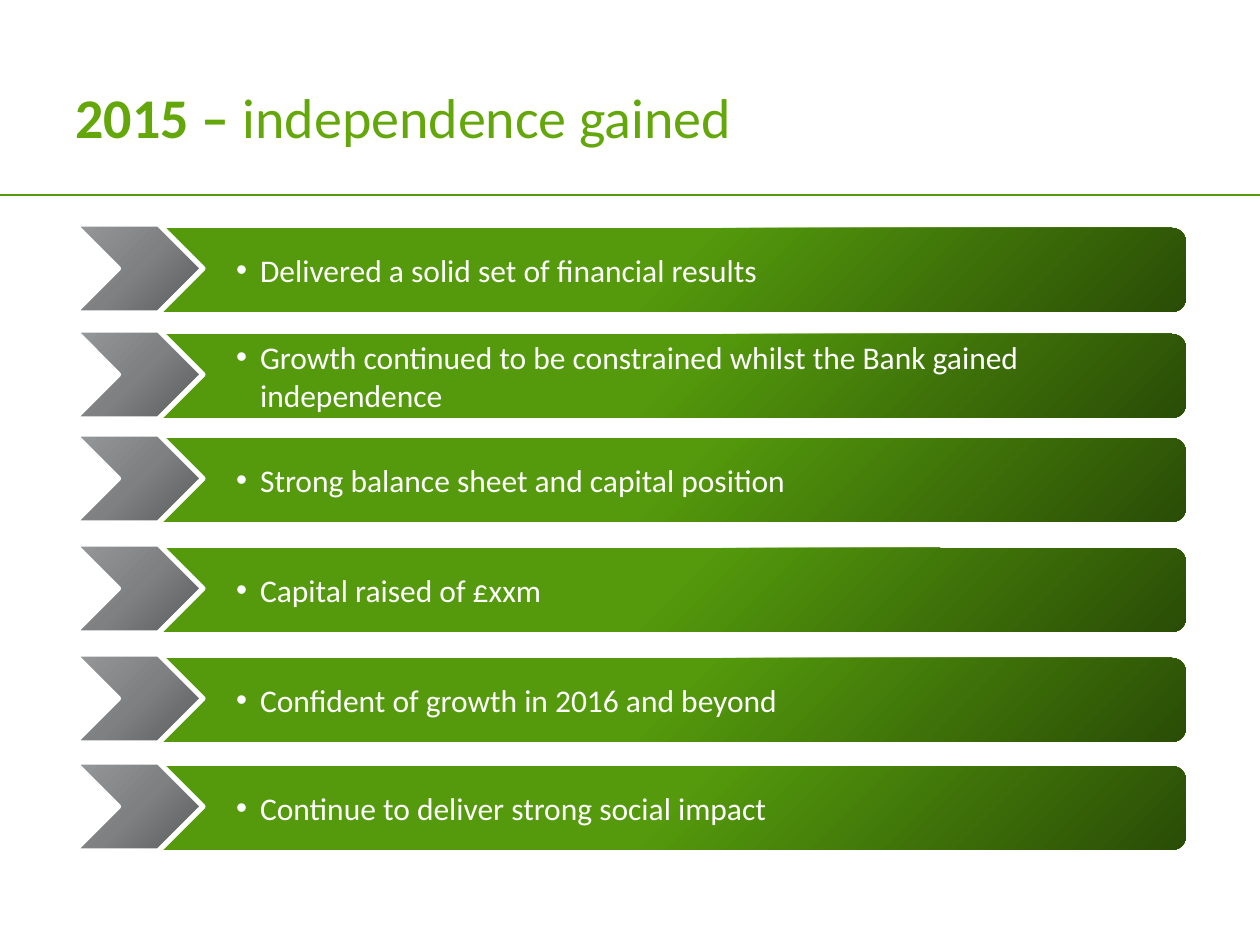
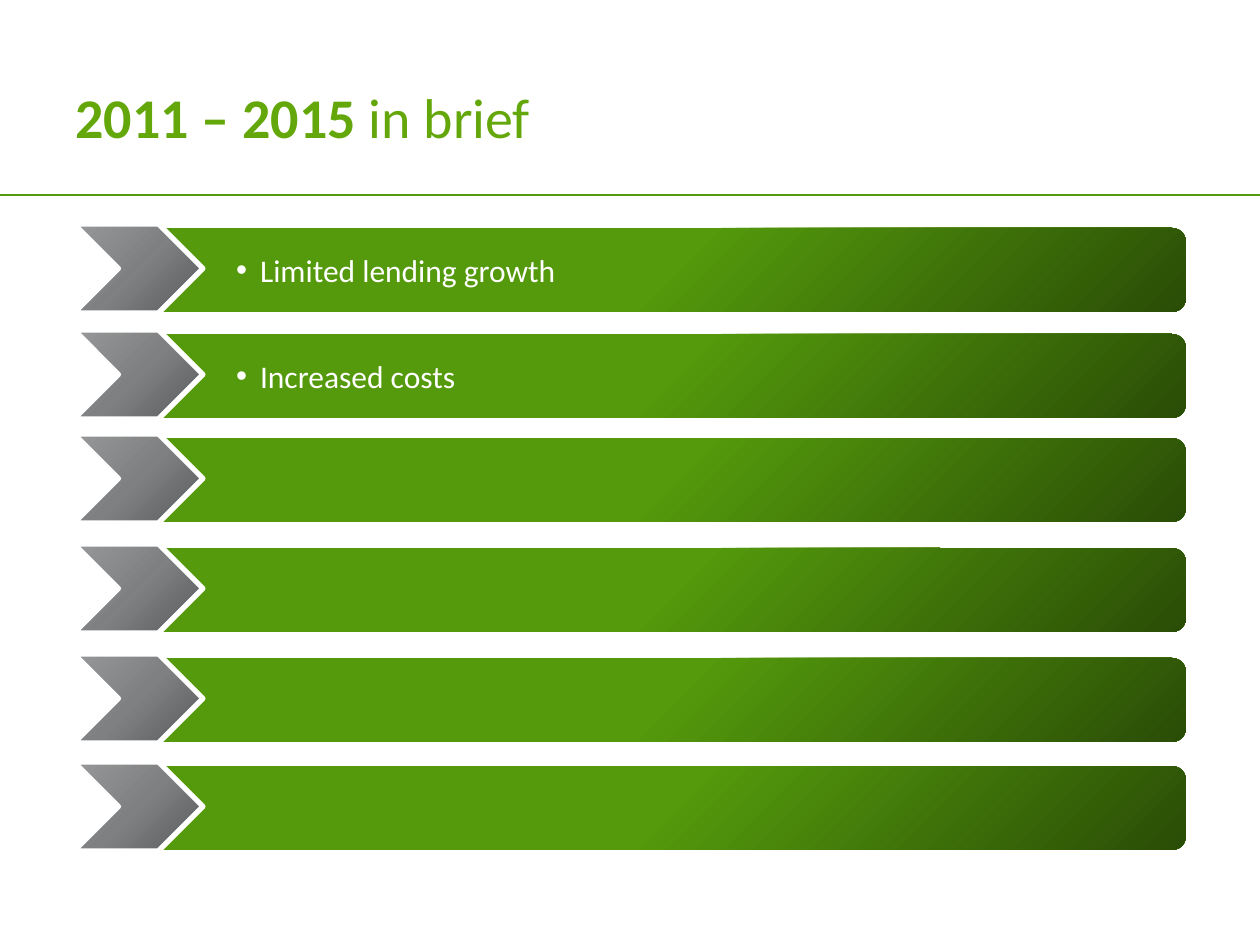
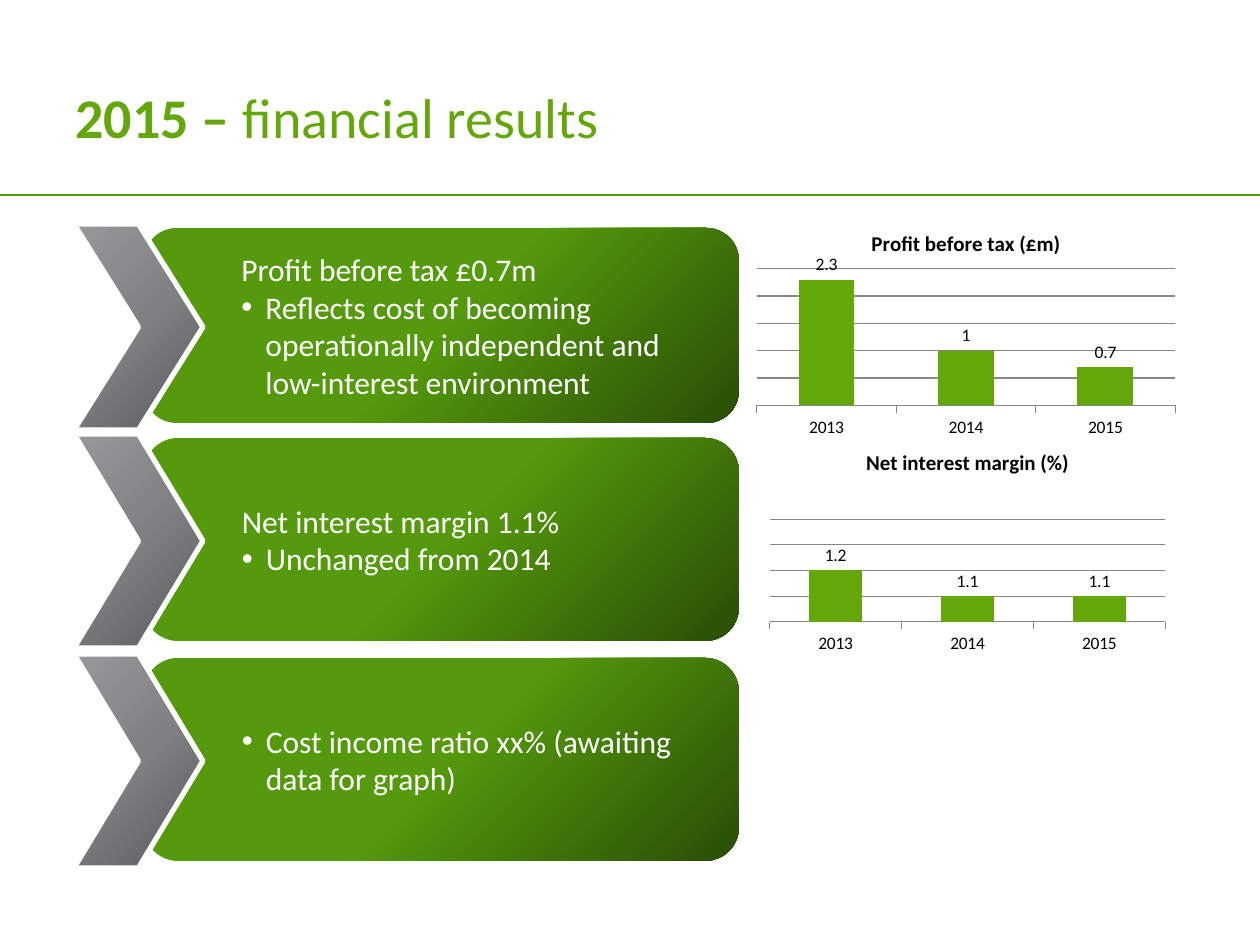
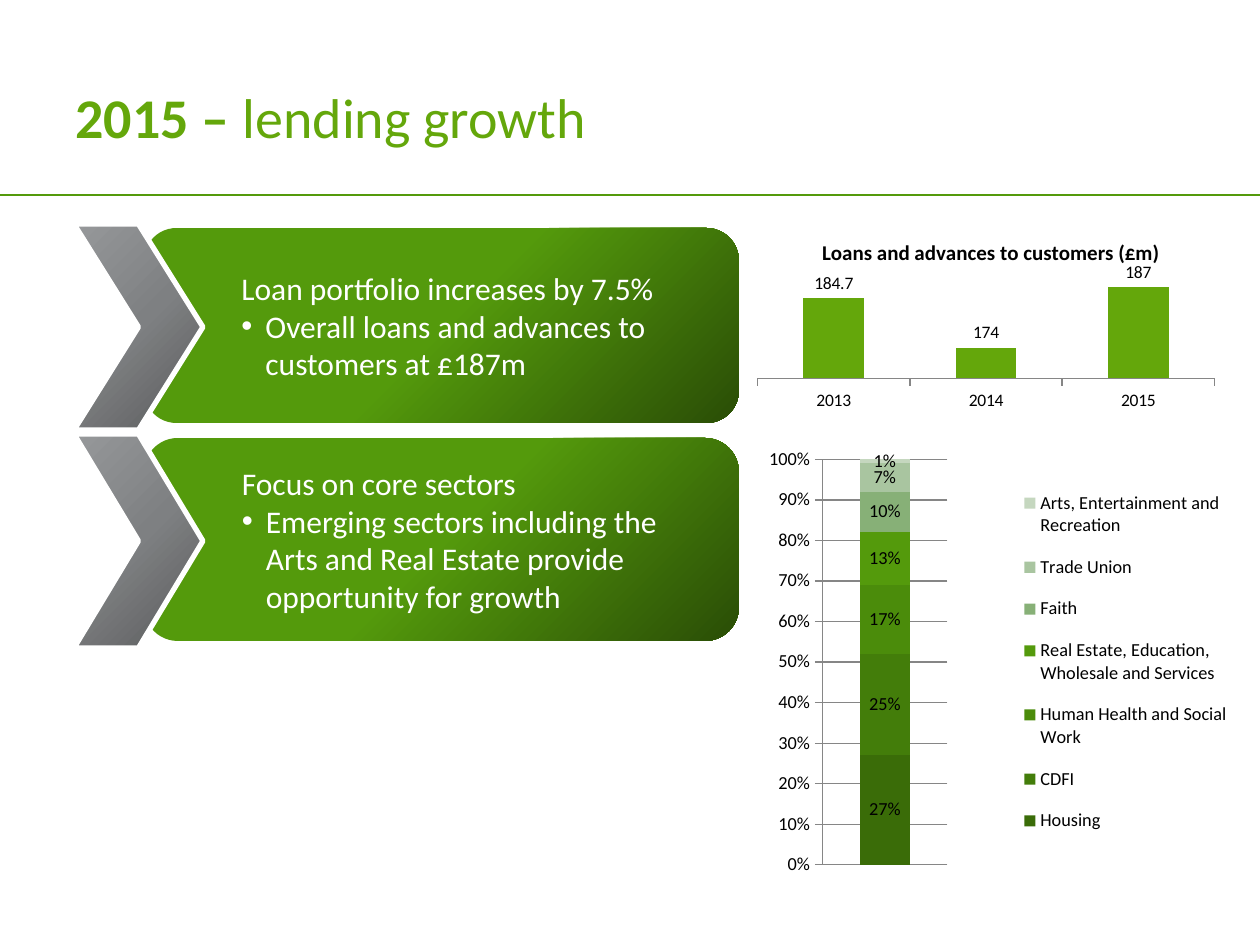
from lxml import etree
from pptx import Presentation
from pptx.chart.data import CategoryChartData
from pptx.dml.color import RGBColor
from pptx.enum.chart import XL_CHART_TYPE, XL_LABEL_POSITION, XL_LEGEND_POSITION, XL_TICK_MARK
from pptx.enum.shapes import MSO_CONNECTOR, MSO_SHAPE
from pptx.enum.text import MSO_ANCHOR, MSO_AUTO_SIZE, PP_ALIGN
from pptx.oxml import parse_xml
from pptx.oxml.ns import nsdecls, qn
from pptx.util import Emu, Pt

CLUSTERED = XL_CHART_TYPE.COLUMN_CLUSTERED
STACKED = XL_CHART_TYPE.COLUMN_STACKED_100
OUTSIDE_END = XL_LABEL_POSITION.OUTSIDE_END
CENTER = XL_LABEL_POSITION.CENTER
LEGEND_RIGHT = XL_LEGEND_POSITION.RIGHT
TICK_OUT = XL_TICK_MARK.OUTSIDE
STRAIGHT = MSO_CONNECTOR.STRAIGHT
ROUND_BAR = MSO_SHAPE.ROUNDED_RECTANGLE
CHEVRON = MSO_SHAPE.CHEVRON
MIDDLE = MSO_ANCHOR.MIDDLE
LEFT = PP_ALIGN.LEFT
NO_FIT = MSO_AUTO_SIZE.NONE

FONT = "Calibri"
WHITE = RGBColor(0xFF, 0xFF, 0xFF)
BLACK = RGBColor(0x00, 0x00, 0x00)
GREEN = RGBColor(0x54, 0x9A, 0x0C)
DARK_GREEN = RGBColor(0x2A, 0x4D, 0x06)
LIME = RGBColor(0x64, 0xA7, 0x0B)
GREY_DARK = RGBColor(0x59, 0x5A, 0x5B)
GREY = RGBColor(0x7E, 0x80, 0x82)
GREY_LIGHT = RGBColor(0x96, 0x98, 0x9A)
AXIS_GREY = RGBColor(0x86, 0x86, 0x86)

BAR_FADE = [(50, GREEN), (100, DARK_GREEN)]
BAR_DIRECTION = '<a:lin ang="2700000" scaled="0"/>'
CHEVRON_FADE = [(0, GREY_DARK), (50, GREY), (100, GREY_LIGHT)]
CHEVRON_DIRECTION = (
    '<a:path path="circle"><a:fillToRect l="100000" t="100000"/></a:path>'
    '<a:tileRect r="-100000" b="-100000"/>'
)

PX_PER_INCH = 126
BAR_LEFT, CHEVRON_LEFT, CHEVRON_WIDTH, CHEVRON_RISE = 144, 74, 129, 4
WIDE_BAR, NARROW_BAR = 1042, 595
ROW_TOPS = [228, 334, 438, 548, 658, 766]
ROW_HEIGHT, ROW_EXTRA = 84, 5
CARD_TOPS = ROW_TOPS[::2]
CARD_HEIGHTS = [195, 203, 203]
CARD_EXTRA = 11

YEARS = ["2013", "2014", "2015"]
SECTORS = [
    ("Housing", 0.27, RGBColor(0x3A, 0x6C, 0x08)),
    ("CDFI", 0.25, RGBColor(0x43, 0x7D, 0x0A)),
    ("Human Health and Social Work", 0.17, RGBColor(0x4B, 0x8C, 0x0B)),
    ("Real Estate, Education, Wholesale and Services", 0.13, GREEN),
    ("Faith", 0.10, RGBColor(0x87, 0xB0, 0x77)),
    ("Trade Union", 0.07, RGBColor(0xA9, 0xC5, 0xA0)),
    ("Arts, Entertainment and Recreation", 0.01, RGBColor(0xC5, 0xD7, 0xBF)),
]
SECTOR_CHART = {
    "at": (769, 442, 466, 436),
    "plot": (0.11, 0.04, 0.27, 0.93),
    "legend": (0.54, 0.07, 0.46, 0.87),
}
PROFIT_CHART = {
    "title": "Profit before tax (£m)", "values": [2.3, 1, 0.7],
    "at": (748, 214, 436, 228), "plot": (0.02, 0.24, 0.96, 0.6),
    "range": (0, 2.5), "grid": "major",
}
MARGIN_CHART = {
    "title": "Net interest margin (%)", "values": [1.2, 1.1, 1.1],
    "at": (769, 433, 397, 233), "plot": (0, 0.26, 1, 0.55),
    "range": (1, 1.5), "grid": "minor",
}
LOANS_CHART = {
    "title": "Loans and advances to customers (£m)", "values": [184.7, 174, 187],
    "at": (748, 224, 486, 198), "plot": (0.02, 0.31, 0.94, 0.47),
    "range": (167.4, 187.4), "grid": None,
}

SLIDES = [
    {
        "title": ("2015 – ", "independence gained"),
        "rows": [
            "Delivered a solid set of financial results",
            "Growth continued to be constrained whilst the Bank gained independence",
            "Strong balance sheet and capital position",
            "Capital raised of £xxm",
            "Confident of growth in 2016 and beyond",
            "Continue to deliver strong social impact",
        ],
    },
    {
        "title": ("2011 – 2015", " in brief"),
        "rows": ["Limited lending growth", "Increased costs", "", "", "", ""],
    },
    {
        "title": ("2015 – ", "financial results"),
        "cards": [
            ("Profit before tax £0.7m",
             "Reflects cost of becoming operationally independent and low-interest environment"),
            ("Net interest margin 1.1%", "Unchanged from 2014"),
            ("", "Cost income ratio xx% (awaiting data for graph)"),
        ],
        "charts": [PROFIT_CHART, MARGIN_CHART],
    },
    {
        "title": ("2015 – ", "lending growth"),
        "cards": [
            ("Loan portfolio increases by 7.5%",
             "Overall loans and advances to customers at £187m"),
            ("Focus on core sectors",
             "Emerging sectors including the Arts and Real Estate provide opportunity for growth"),
        ],
        "sectors": SECTORS,
        "charts": [LOANS_CHART],
    },
]


def px(length):
    return Emu(round(length * 914400 / PX_PER_INCH))


def place(*lengths):
    return [px(length) for length in lengths]


def style_font(font, size, color, bold=False):
    font.name = FONT
    font.size = Pt(size)
    font.bold = bold
    font.color.rgb = color


def add_span(para, text, size, color, bold=False):
    span = para.add_run()
    span.text = text
    style_font(span.font, size, color, bold)


def add_gradient_shape(page, kind, at, stops, direction):
    shape = page.shapes.add_shape(kind, *place(*at))
    shape.shadow.inherit = False
    shape.fill.background()
    stop_xml = "".join(
        f'<a:gs pos="{position * 1000}"><a:srgbClr val="{color}"/></a:gs>'
        for position, color in stops
    )
    gradient = parse_xml(
        f'<a:gradFill {nsdecls("a")} rotWithShape="1">'
        f"<a:gsLst>{stop_xml}</a:gsLst>{direction}</a:gradFill>"
    )
    properties = shape.element.spPr
    properties.replace(properties.find(qn("a:noFill")), gradient)
    return shape


def add_bullet(para):
    properties = para._p.get_or_add_pPr()
    color = etree.SubElement(properties, qn("a:buClr"))
    etree.SubElement(color, qn("a:srgbClr"), val=str(WHITE))
    etree.SubElement(properties, qn("a:buFont"), typeface="Arial")
    etree.SubElement(properties, qn("a:buChar"), char="•")


def add_banner(page, top, width, height, extra, heading, detail):
    bar = add_gradient_shape(
        page, ROUND_BAR, (BAR_LEFT, top, width, height), BAR_FADE, BAR_DIRECTION)
    bar.line.fill.background()
    frame = bar.text_frame
    frame.word_wrap = True
    frame.vertical_anchor = MIDDLE
    frame.margin_left, frame.margin_right = place(39, 13)
    frame.margin_top = frame.margin_bottom = px(6)
    lines = [(text, bulleted) for text, bulleted in ((heading, False), (detail, True)) if text]
    for number, (text, bulleted) in enumerate(lines):
        para = frame.add_paragraph() if number else frame.paragraphs[0]
        para.alignment = LEFT
        properties = para._p.get_or_add_pPr()
        properties.set("marL", str(px(73)))
        properties.set("indent", str(px(-24)))
        if bulleted:
            add_bullet(para)
        add_span(para, text, 18, WHITE)

    chevron = add_gradient_shape(
        page, CHEVRON,
        (CHEVRON_LEFT, top - CHEVRON_RISE, CHEVRON_WIDTH, height + extra),
        CHEVRON_FADE, CHEVRON_DIRECTION)
    chevron.line.color.rgb = WHITE
    chevron.line.width = Pt(3)


def manual_layout(area, inner=False):
    target = '<c:layoutTarget val="inner"/>' if inner else ""
    sizes = "".join(f'<c:{key} val="{value}"/>' for key, value in zip("xywh", area))
    return parse_xml(
        f'<c:layout {nsdecls("c")}><c:manualLayout>{target}'
        f'<c:xMode val="edge"/><c:yMode val="edge"/>{sizes}'
        "</c:manualLayout></c:layout>"
    )


def set_layout(parent, layout, index):
    for old in parent.findall(qn("c:layout")):
        parent.remove(old)
    parent.insert(index, layout)


def draw_line(line):
    line.color.rgb = AXIS_GREY
    line.width = Pt(0.75)


def draw_minor_gridlines(chart):
    chart.value_axis.has_minor_gridlines = True
    gridlines = chart.element.xpath(".//c:valAx/c:minorGridlines")[0]
    gridlines.append(parse_xml(
        f'<c:spPr {nsdecls("c", "a")}><a:ln w="{Pt(0.5)}"><a:solidFill>'
        f'<a:srgbClr val="{AXIS_GREY}"/></a:solidFill></a:ln></c:spPr>'
    ))


def add_column_chart(page, kind, at, plot_area, categories, series, size, position, number_format):
    data = CategoryChartData()
    data.categories = categories
    for name, values, color in series:
        data.add_series(name, values)
    chart = page.shapes.add_chart(kind, *place(*at), data).chart
    style_font(chart.font, size, BLACK)
    chart.has_title = False
    chart.has_legend = False
    plot = chart.plots[0]
    plot.vary_by_categories = False
    plot.gap_width = 150
    plot.has_data_labels = True
    labels = plot.data_labels
    labels.show_value = True
    labels.position = position
    labels.number_format = number_format
    labels.number_format_is_linked = False
    style_font(labels.font, size, BLACK)
    for drawn, (name, values, color) in zip(plot.series, series):
        drawn.format.fill.solid()
        drawn.format.fill.fore_color.rgb = color
    chart.value_axis.has_major_gridlines = False
    for axis in (chart.category_axis, chart.value_axis):
        axis.major_tick_mark = TICK_OUT
        draw_line(axis.format.line)
    set_layout(chart.element.xpath(".//c:plotArea")[0], manual_layout(plot_area, True), 0)
    return chart


def add_year_chart(page, details):
    chart = add_column_chart(
        page, CLUSTERED, details["at"], details["plot"], YEARS,
        [("Series 1", details["values"], LIME)], 10, OUTSIDE_END, "General")
    chart.has_title = True
    add_span(chart.chart_title.text_frame.paragraphs[0], details["title"], 12, BLACK, True)
    axis = chart.value_axis
    axis.visible = False
    axis.minimum_scale, axis.maximum_scale = details["range"]
    axis.major_unit = 0.5
    if details["grid"] == "major":
        axis.has_major_gridlines = True
        draw_line(axis.major_gridlines.format.line)
    elif details["grid"] == "minor":
        axis.minor_unit = 0.1
        draw_minor_gridlines(chart)


def add_sector_chart(page, sectors):
    chart = add_column_chart(
        page, STACKED, SECTOR_CHART["at"], SECTOR_CHART["plot"], ["1"],
        [(name, [share], color) for name, share, color in sectors], 10.5, CENTER, "0%")
    chart.plots[0].overlap = 100
    chart.category_axis.visible = False
    axis = chart.value_axis
    axis.maximum_scale = 1
    axis.major_unit = 0.1
    axis.has_major_gridlines = True
    draw_line(axis.major_gridlines.format.line)
    axis.tick_labels.number_format = "0%"
    axis.tick_labels.number_format_is_linked = False
    chart.has_legend = True
    chart.legend.position = LEGEND_RIGHT
    chart.legend.include_in_layout = False
    style_font(chart.legend.font, 10.5, BLACK)
    set_layout(chart.element.xpath(".//c:legend")[0], manual_layout(SECTOR_CHART["legend"]), 1)


def add_title(page, strong, light):
    title = page.shapes.title
    title.left, title.top, title.width, title.height = place(63, 38, 1134, 157)
    frame = title.text_frame
    frame.word_wrap = True
    frame.auto_size = NO_FIT
    frame.vertical_anchor = MIDDLE
    para = frame.paragraphs[0]
    para.alignment = LEFT
    add_span(para, strong, 32, LIME, True)
    add_span(para, light, 32, LIME)


def add_shared_rule(page, layout):
    rule = page.shapes.add_connector(STRAIGHT, *place(-4, 195, 1266, 195))
    rule.line.color.rgb = GREEN
    rule.line.width = Pt(1.5)
    etree.SubElement(rule.element.spPr, qn("a:effectLst"))
    layout.element.cSld.spTree.append(rule.element)


def main():
    deck = Presentation()
    deck.slide_width, deck.slide_height = place(1260, 945)
    layout = deck.slide_layouts[5]
    for number, content in enumerate(SLIDES):
        page = deck.slides.add_slide(layout)
        if number == 0:
            add_shared_rule(page, layout)
        add_title(page, *content["title"])
        for top, text in zip(ROW_TOPS, content.get("rows", [])):
            add_banner(page, top, WIDE_BAR, ROW_HEIGHT, ROW_EXTRA, "", text)
        for top, height, card in zip(CARD_TOPS, CARD_HEIGHTS, content.get("cards", [])):
            add_banner(page, top, NARROW_BAR, height, CARD_EXTRA, *card)
        if "sectors" in content:
            add_sector_chart(page, content["sectors"])
        for details in content.get("charts", []):
            add_year_chart(page, details)
    deck.save("out.pptx")


if __name__ == "__main__":
    main()
